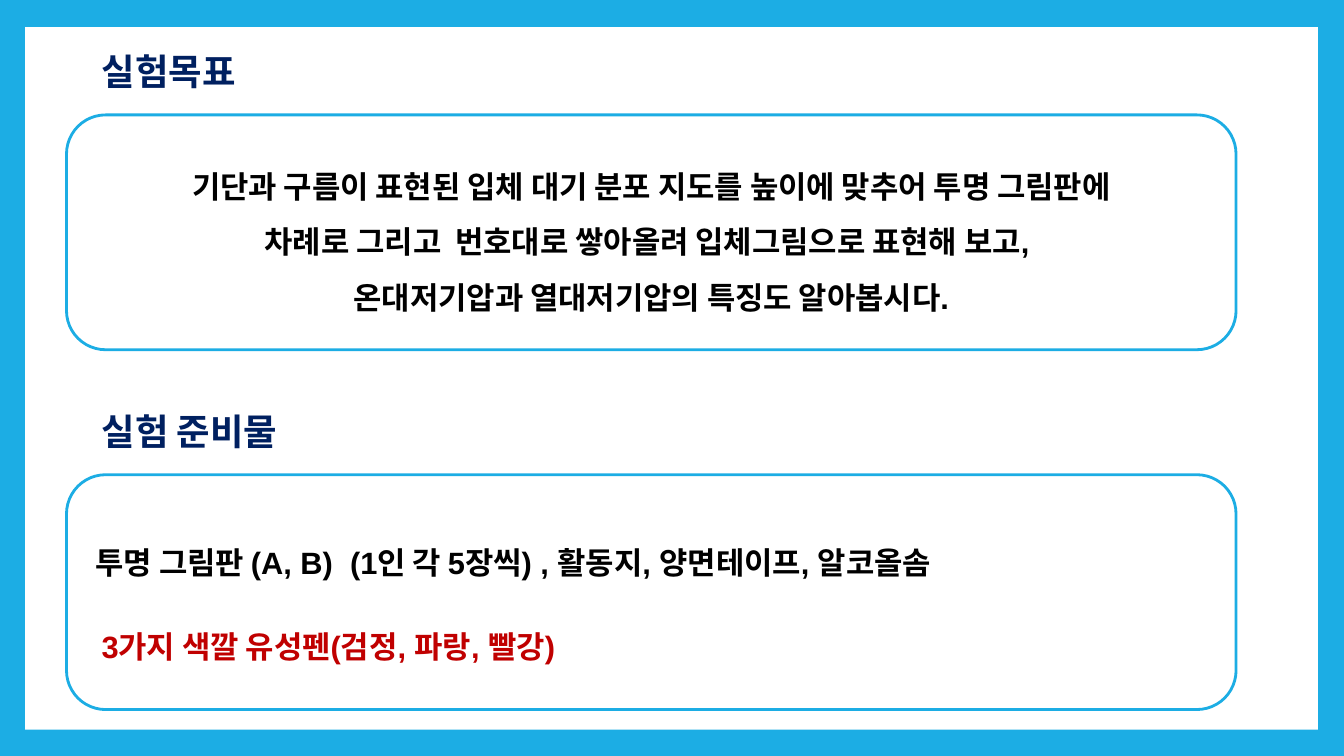
from pptx import Presentation
from pptx.dml.color import RGBColor
from pptx.enum.shapes import MSO_SHAPE
from pptx.enum.text import MSO_ANCHOR, MSO_AUTO_SIZE, PP_ALIGN
from pptx.util import Inches, Pt

RECT, ROUND_RECT = MSO_SHAPE.RECTANGLE, MSO_SHAPE.ROUNDED_RECTANGLE
MIDDLE, CENTER, LEFT = MSO_ANCHOR.MIDDLE, PP_ALIGN.CENTER, PP_ALIGN.LEFT
GROW = MSO_AUTO_SIZE.SHAPE_TO_FIT_TEXT
COLORS = {"blue": "1CADE4", "white": "FFFFFF", "navy": "002060",
          "black": "000000", "red": "C00000"}
PANEL_W, PANEL_H = 11.6, 2.33
GOAL = ["기단과 구름이 표현된 입체 대기 분포 지도를 높이에 맞추어 투명 그림판에",
        "차례로 그리고  번호대로 쌓아올려 입체그림으로 표현해 보고, ",
        "온대저기압과 열대저기압의 특징도 알아봅시다."]
SUPPLIES = "투명 그림판 (A, B)  (1인 각 5장씩) , 활동지, 양면테이프, 알코올솜"
PENS = "3가지 색깔 유성펜(검정, 파랑, 빨강)"


def rgb(name):
    """Return the named colour."""
    return RGBColor.from_string(COLORS[name])


def add_box(s, shape, x, y, w, h):
    """Add a white shape without outline or shadow."""
    sp = s.shapes.add_shape(shape, Inches(x), Inches(y), Inches(w), Inches(h))
    sp.shadow.inherit = False
    sp.fill.solid()
    sp.fill.fore_color.rgb = rgb("white")
    sp.line.fill.background()
    return sp


def write(tf, lines, color, size=22, font="Arial", spacing=1.0, align=LEFT):
    """Write bold lines, one per paragraph."""
    for i, line in enumerate(lines):
        p = tf.add_paragraph() if i else tf.paragraphs[0]
        p.text = line
        p.alignment = align
        p.line_spacing = spacing
        p.font.size = Pt(size)
        p.font.name = font
        p.font.bold = True
        p.font.color.rgb = rgb(color)


def add_text(s, x, y, w, h):
    """Add a wrapping text box and return its text frame."""
    tf = s.shapes.add_textbox(Inches(x), Inches(y), Inches(w), Inches(h)).text_frame
    tf.word_wrap = True
    return tf


def add_section(s, x, y, title):
    """Add a heading above an outlined panel and return the panel."""
    tf = add_text(s, x + 0.25, y, 2.3, 0.48)
    tf.margin_left = tf.margin_right = tf.margin_top = tf.margin_bottom = Inches(0.1)
    write(tf, [title], "navy", 26, "Calibri")
    panel = add_box(s, ROUND_RECT, x, y + 0.75, PANEL_W, PANEL_H)
    panel.line.color.rgb = rgb("blue")
    panel.line.width = Pt(2)
    return panel


def add_goal(s, x, y):
    """Add the experiment goal section."""
    tf = add_section(s, x, y, "실험목표").text_frame
    tf.word_wrap = True
    tf.vertical_anchor = MIDDLE
    write(tf, GOAL, "black", spacing=1.5, align=CENTER)


def add_supplies(s, x, y):
    """Add the supplies section with its two lines."""
    add_section(s, x, y, "실험 준비물")
    for line, color, dx, dy, h, spacing in (
            (PENS, "red", 0.25, 1.85, 0.72, 2.0),
            (SUPPLIES, "black", 0.19, 1.2, 0.58, 1.5)):
        tf = add_text(s, x + dx, y + dy, 11.53, h)
        tf.auto_size = GROW
        write(tf, [line], color, spacing=spacing)


def main():
    """Build and save the slide."""
    prs = Presentation()
    prs.slide_width, prs.slide_height = Inches(13.33), Inches(7.5)
    s = prs.slides.add_slide(prs.slide_layouts[6])
    s.background.fill.solid()
    s.background.fill.fore_color.rgb = rgb("blue")
    add_box(s, RECT, 0.25, 0.27, 12.82, 6.97)
    add_goal(s, 0.66, 0.39)
    add_supplies(s, 0.66, 3.96)
    prs.save("out.pptx")


if __name__ == "__main__":
    main()
